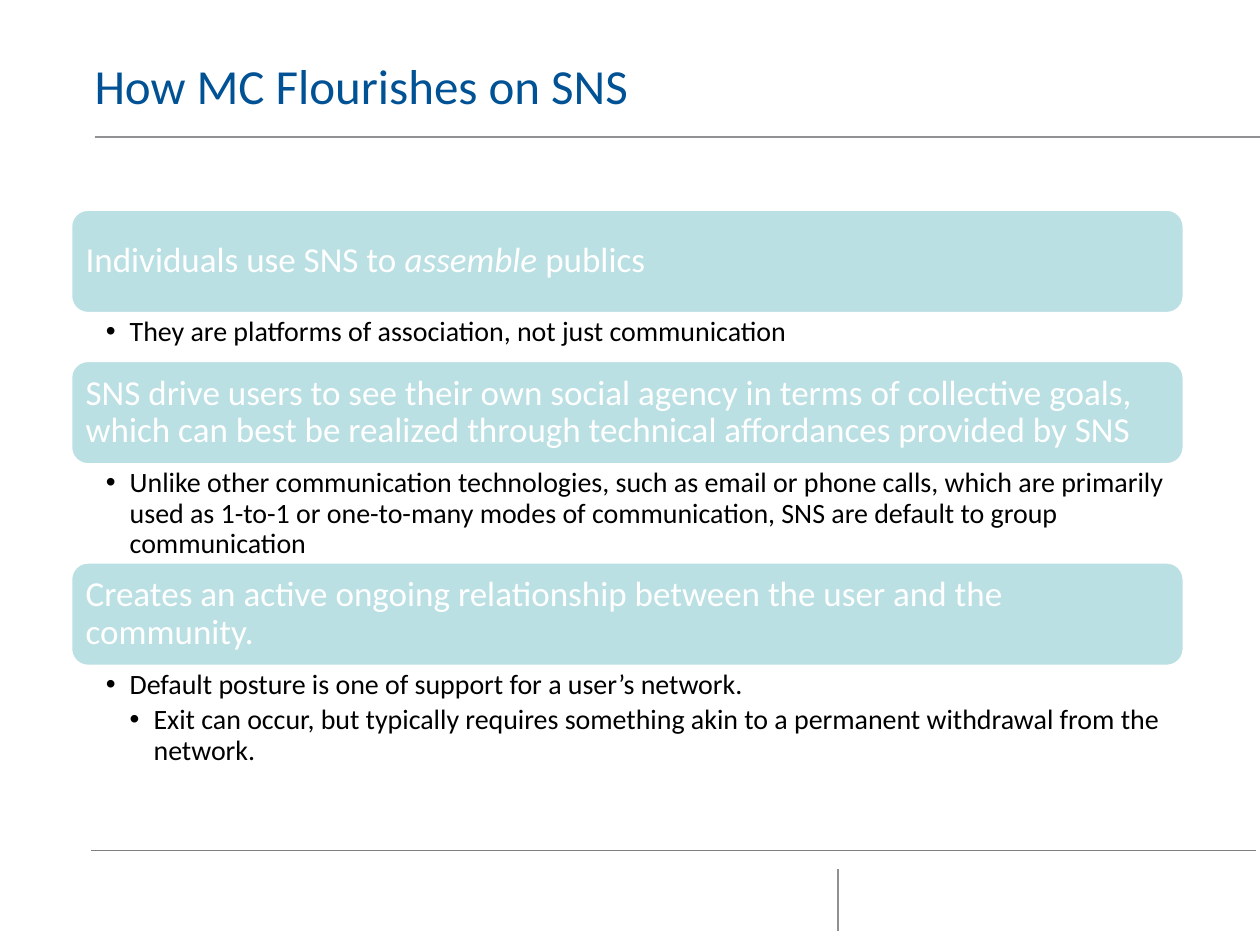
"""Build the slide on how MC flourishes on SNS."""
from lxml import etree
from pptx import Presentation
from pptx import util as u
from pptx.dml.color import RGBColor
from pptx.enum import shapes, text
from pptx.oxml.ns import qn

TITLE = "How MC Flourishes on SNS"
SECTIONS = [
    ([("Individuals use SNS to ", False), ("assemble", True), (" publics", False)],
     [(1, "They are platforms of association, not just communication")], 0.37),
    ([("SNS drive users to see their own social agency in terms of collective goals, "
       "which can best be realized through technical affordances provided by SNS", False)],
     [(1, "Unlike other communication technologies, such as email or phone calls, "
          "which are primarily used as 1-to-1 or one-to-many modes of communication, "
          "SNS are default to group communication")], 0.77),
    ([("Creates an active ongoing relationship between the user and the community.", False)],
     [(1, "Default posture is one of support for a user’s network."),
      (2, "Exit can occur, but typically requires something akin to a permanent "
          "withdrawal from the network.")], 0.81),
]
RULES = [
    ((0.72, 6.75), (9.97, 6.75), "808080"),
    ((0.75, 1.09), (10, 1.09), "919194"),
    ((6.65, 7.39), (6.65, 6.9), "919194"),
]
LEFT, TOP, WIDTH, BAR_H, INDENT = 0.56, 1.66, 8.84, 0.83, 0.19


def rgb(value):
    return RGBColor.from_string(value)


def style(obj, **values):
    for name, value in values.items():
        setattr(obj, name, value)


def set_font(font, size, color, italic=None):
    style(font, name="Calibri", size=u.Pt(size), italic=italic)
    font.color.rgb = rgb(color)


def set_frame(tf, left, top, right, bottom, anchor):
    style(tf, margin_left=u.Inches(left), margin_top=u.Inches(top),
          margin_right=u.Inches(right), margin_bottom=u.Inches(bottom),
          vertical_anchor=anchor, word_wrap=True, auto_size=text.MSO_AUTO_SIZE.NONE)


def add_rule(s, start, end, color):
    line = s.shapes.add_connector(shapes.MSO_CONNECTOR.STRAIGHT,
                                  *map(u.Inches, start + end))
    line.line.color.rgb = rgb(color)
    line.line.width = u.Pt(1)
    etree.SubElement(line._element.spPr, qn("a:effectLst"))


def add_heading(s, top, runs):
    sp = s.shapes.add_shape(shapes.MSO_SHAPE.ROUNDED_RECTANGLE,
                            *map(u.Inches, (LEFT, top, WIDTH, BAR_H)))
    sp.shadow.inherit = False
    sp.fill.solid()
    sp.fill.fore_color.rgb = rgb("BBE0E3")
    sp.line.color.rgb = rgb("FFFFFF")
    sp.line.width = u.Pt(2)
    set_frame(sp.text_frame, 0.08, 0.08, 0.08, 0.08, text.MSO_ANCHOR.MIDDLE)
    p = sp.text_frame.paragraphs[0]
    style(p, alignment=text.PP_ALIGN.LEFT, line_spacing=0.9)
    for words, italic in runs:
        r = p.add_run()
        r.text = words
        set_font(r.font, 20, "FFFFFF", italic)


def add_bullets(s, top, height, items):
    sp = s.shapes.add_textbox(*map(u.Inches, (LEFT, top, WIDTH, height)))
    tf = sp.text_frame
    set_frame(tf, 0.28, 0.03, 0.16, 0.03, text.MSO_ANCHOR.TOP)
    for i, (level, words) in enumerate(items):
        p = tf.add_paragraph() if i else tf.paragraphs[0]
        style(p, text=words, level=level, line_spacing=0.9, space_after=u.Pt(3))
        pPr = p._p.get_or_add_pPr()
        pPr.set("marL", str(u.Inches(INDENT * level)))
        pPr.set("indent", str(u.Inches(-INDENT)))
        etree.SubElement(pPr, qn("a:buFont"), typeface="Arial")
        etree.SubElement(pPr, qn("a:buChar"), char="•")
        set_font(p.runs[0].font, 16, "000000")


def main():
    prs = Presentation()
    style(prs, slide_width=u.Inches(10), slide_height=u.Inches(7.5))
    s = prs.slides.add_slide(prs.slide_layouts[5])
    for rule in RULES:
        add_rule(s, *rule)

    title = s.shapes.title
    style(title, left=u.Inches(0.75), top=u.Inches(0.46),
          width=u.Inches(8.63), height=u.Inches(1.04))
    set_frame(title.text_frame, 0, 0, 0, 0, text.MSO_ANCHOR.TOP)
    p = title.text_frame.paragraphs[0]
    style(p, text=TITLE, alignment=text.PP_ALIGN.LEFT, line_spacing=u.Pt(32))
    set_font(p.runs[0].font, 28, "005295")

    top = TOP
    for heading, bullets, height in SECTIONS:
        add_heading(s, top, heading)
        add_bullets(s, top + BAR_H, height, bullets)
        top += BAR_H + height
    prs.save("out.pptx")


if __name__ == "__main__":
    main()
